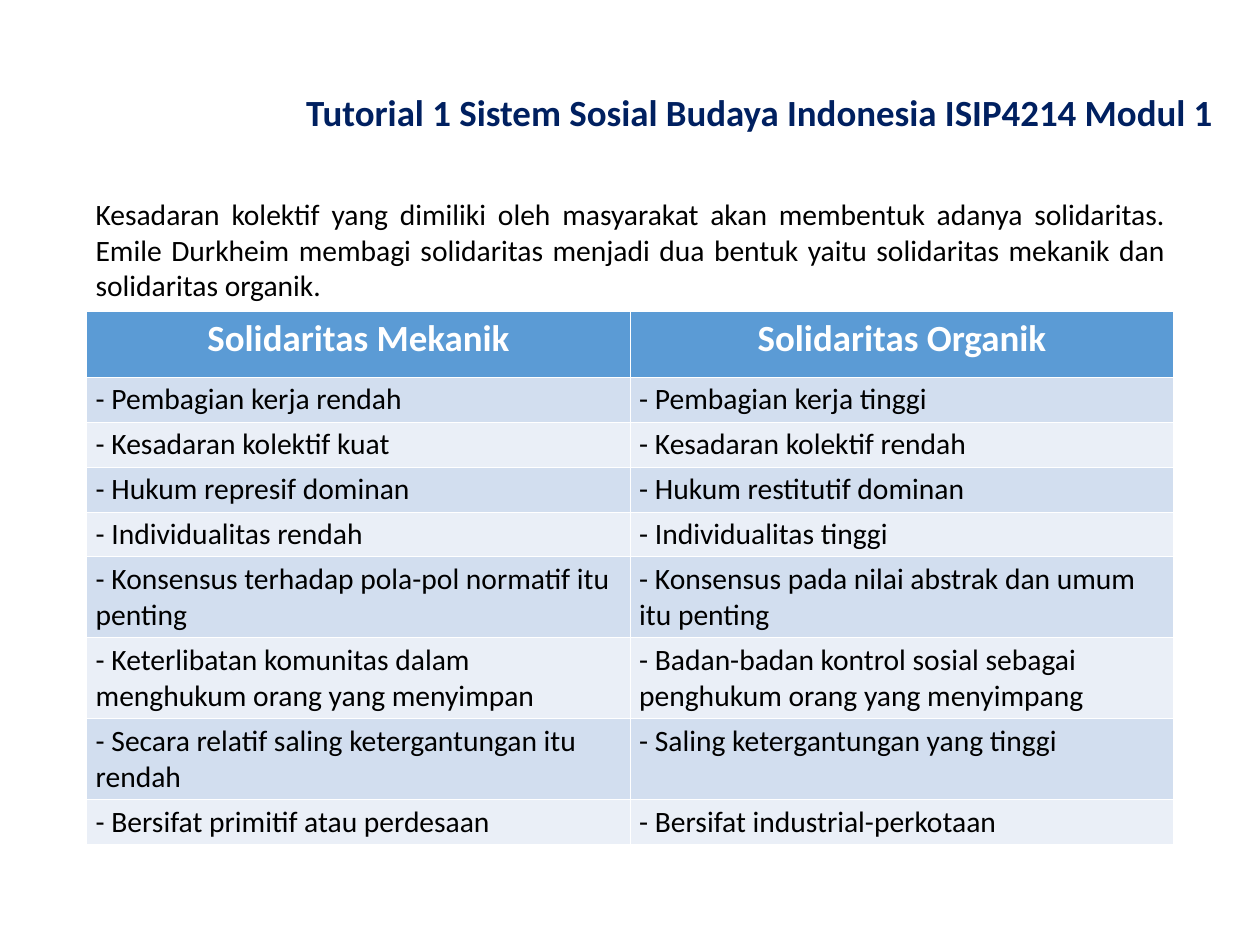
from dataclasses import dataclass

from pptx import Presentation
from pptx.dml.color import RGBColor
from pptx.enum.text import MSO_ANCHOR, MSO_AUTO_SIZE, PP_ALIGN
from pptx.util import Cm, Pt


@dataclass(frozen=True)
class Theme:
    font: str = "Calibri"
    heading_size: int = 30
    body_size: int = 24
    navy: str = "002060"
    black: str = "000000"
    white: str = "FFFFFF"
    header_fill: str = "5B9BD5"
    band_fills: tuple = ("D2DEEF", "EAEFF7")


THEME = Theme()

TITLE = "Tutorial 1 Sistem Sosial Budaya Indonesia ISIP4214 Modul 1"
INTRO = (
    "Kesadaran kolektif yang dimiliki oleh masyarakat akan membentuk adanya "
    "solidaritas. Emile Durkheim membagi solidaritas menjadi dua bentuk yaitu "
    "solidaritas mekanik dan solidaritas organik."
)
HEADINGS = ("Solidaritas Mekanik", "Solidaritas Organik")
COMPARISON = (
    ("- Pembagian kerja rendah", "- Pembagian kerja tinggi"),
    ("- Kesadaran kolektif kuat", "- Kesadaran kolektif rendah"),
    ("- Hukum represif dominan", "- Hukum restitutif dominan"),
    ("- Individualitas rendah", "- Individualitas tinggi"),
    ("- Konsensus terhadap pola-pol normatif itu penting",
     "- Konsensus pada nilai abstrak dan umum itu penting"),
    ("- Keterlibatan komunitas dalam menghukum orang yang menyimpan",
     "- Badan-badan kontrol sosial sebagai penghukum orang yang menyimpang"),
    ("- Secara relatif saling ketergantungan itu rendah",
     "- Saling ketergantungan yang tinggi"),
    ("- Bersifat primitif atau perdesaan", "- Bersifat industrial-perkotaan"),
)

MARGIN_LEFT = Cm(2.49)
CONTENT_WIDTH = Cm(31.16)
TABLE_HEIGHT = Cm(15.09)
HEADER_HEIGHT = Cm(1.88)
ROW_HEIGHT = Cm(1.27)


def write(frame, text, size, color, bold=False, align=PP_ALIGN.LEFT):
    """Put one styled run in the first paragraph and return that paragraph."""
    paragraph = frame.paragraphs[0]
    paragraph.alignment = align
    run = paragraph.add_run()
    run.text = text
    run.font.name = THEME.font
    run.font.size = Pt(size)
    run.font.bold = bold
    run.font.color.rgb = RGBColor.from_string(color)
    return paragraph


def add_text_frame(slide, left, top, width, height):
    frame = slide.shapes.add_textbox(left, top, width, height).text_frame
    frame.word_wrap = True
    return frame


def add_title(slide):
    frame = add_text_frame(slide, Cm(8.53), Cm(2.34), Cm(28.58), Cm(1.9))
    frame.vertical_anchor = MSO_ANCHOR.MIDDLE
    title = write(frame, TITLE, THEME.heading_size, THEME.navy, bold=True)
    title.line_spacing = 0.9


def add_intro(slide):
    frame = add_text_frame(slide, MARGIN_LEFT, Cm(5.51), CONTENT_WIDTH, Cm(3.33))
    frame.auto_size = MSO_AUTO_SIZE.SHAPE_TO_FIT_TEXT
    write(frame, INTRO, THEME.body_size, THEME.black, align=PP_ALIGN.JUSTIFY)


def fill_row(row, height, texts, fill, **text_style):
    row.height = height
    for cell, text in zip(row.cells, texts):
        cell.fill.solid()
        cell.fill.fore_color.rgb = RGBColor.from_string(fill)
        write(cell.text_frame, text, **text_style)


def add_comparison_table(slide):
    """Add the table; its default style already draws the white borders."""
    table_frame = slide.shapes.add_table(
        len(COMPARISON) + 1, len(HEADINGS),
        MARGIN_LEFT, Cm(8.94), CONTENT_WIDTH, TABLE_HEIGHT)
    header, *body = table_frame.table.rows
    fill_row(header, HEADER_HEIGHT, HEADINGS, THEME.header_fill,
             size=THEME.heading_size, color=THEME.white,
             bold=True, align=PP_ALIGN.CENTER)
    for index, (row, texts) in enumerate(zip(body, COMPARISON)):
        fill_row(row, ROW_HEIGHT, texts, THEME.band_fills[index % 2],
                 size=THEME.body_size, color=THEME.black)
    # Two-line rows grow beyond ROW_HEIGHT, so the frame is taller than their sum.
    table_frame.height = TABLE_HEIGHT


def main():
    deck = Presentation()
    deck.slide_width, deck.slide_height = Cm(36.12), Cm(27.1)
    slide = deck.slides.add_slide(deck.slide_layouts[6])
    add_comparison_table(slide)
    add_title(slide)
    add_intro(slide)
    deck.save("out.pptx")


if __name__ == "__main__":
    main()
